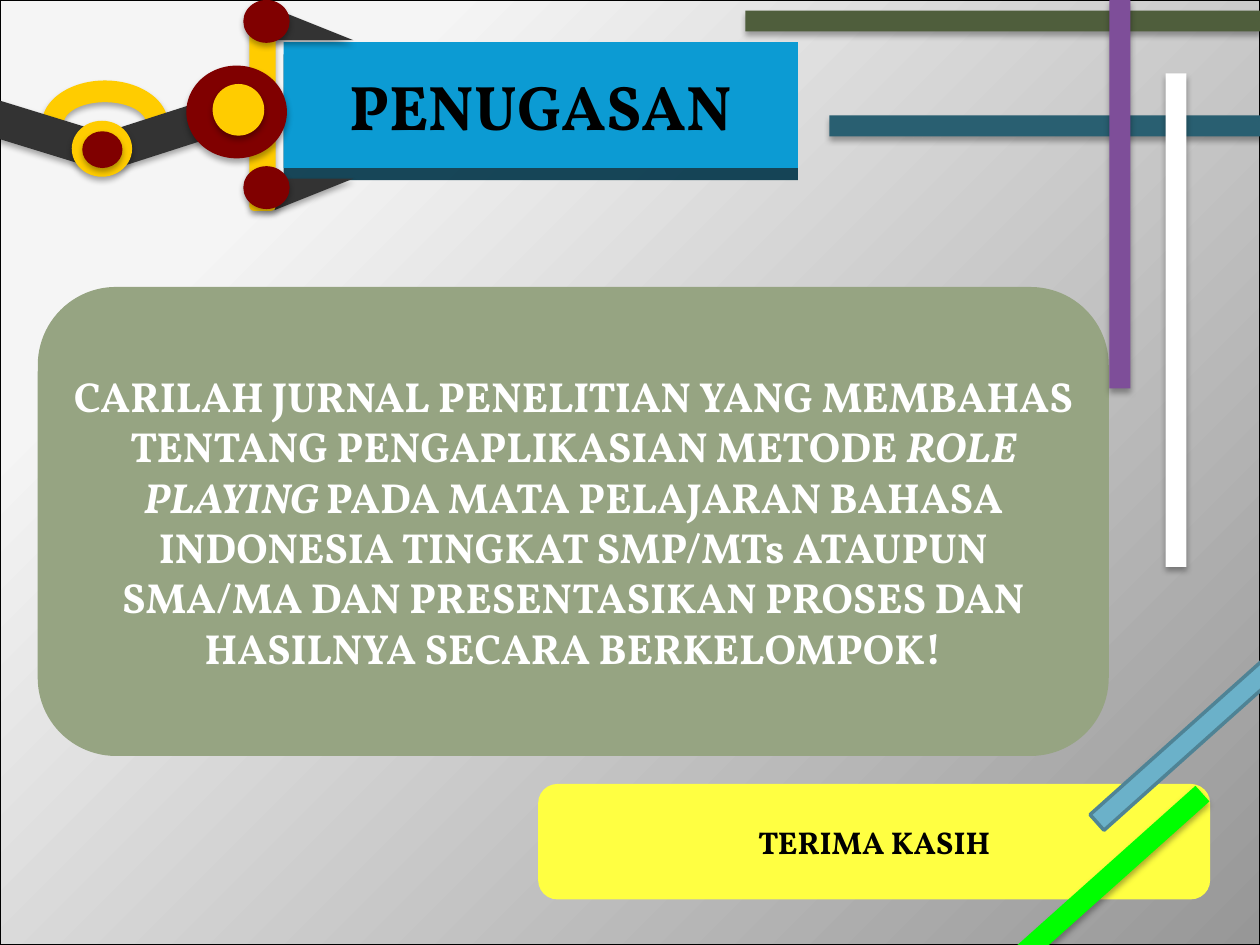
from dataclasses import dataclass

from lxml import etree
from pptx import Presentation
from pptx.dml.color import RGBColor
from pptx.enum.shapes import MSO_SHAPE
from pptx.enum.text import MSO_ANCHOR, MSO_AUTO_SIZE, PP_ALIGN
from pptx.oxml import parse_xml
from pptx.oxml.ns import nsdecls, qn
from pptx.util import Pt

RECTANGLE, ROUNDED = MSO_SHAPE.RECTANGLE, MSO_SHAPE.ROUNDED_RECTANGLE
OVAL, ARC, TRIANGLE = MSO_SHAPE.OVAL, MSO_SHAPE.BLOCK_ARC, MSO_SHAPE.RIGHT_TRIANGLE
CENTER, MIDDLE = PP_ALIGN.CENTER, MSO_ANCHOR.MIDDLE


@dataclass(frozen=True)
class Theme:
    font: str = "Vollkorn"
    title_size: int = 36
    body_size: int = 24
    closing_size: int = 18
    black: str = "000000"
    white: str = "FFFFFF"
    light: str = "F5F5F5"
    gray: str = "979797"
    title_fill: str = "0C9BD3"
    title_edge: str = "003448"
    body_fill: str = "96A482"
    closing_fill: str = "FFFF42"
    olive: str = "4F5E3C"
    teal: str = "295F71"
    purple: str = "7E4E99"
    blue: str = "6BB1C9"
    blue_line: str = "4F8395"
    green: str = "00FF00"
    charcoal: str = "333333"
    gold: str = "FFCC00"
    maroon: str = "800000"


THEME = Theme()


def add_shadow(shape, color=THEME.black, opacity=32, blur=3.5, distance=2.2):
    effects = shape._element.spPr.find(qn("a:effectLst"))
    effects.append(parse_xml(
        f'<a:outerShdw {nsdecls("a")} blurRad="{Pt(blur)}" dist="{Pt(distance)}" '
        f'dir="5400000" algn="ctr" rotWithShape="0"><a:srgbClr val="{color}">'
        f'<a:alpha val="{opacity * 1000}"/></a:srgbClr></a:outerShdw>'))


def paint(shape, color, line=None, line_width=1):
    shape.shadow.inherit = False
    shape.fill.solid()
    shape.fill.fore_color.rgb = RGBColor.from_string(color)
    if line:
        shape.line.color.rgb = RGBColor.from_string(line)
        shape.line.width = Pt(line_width)
    else:
        shape.line.fill.background()


def add_part(shapes, kind, box, color, rotation=0, shadow=True, **line):
    shape = shapes.add_shape(kind, *map(Pt, box))
    paint(shape, color, **line)
    shape.rotation = rotation
    if shadow:
        add_shadow(shape)
    return shape


def write_text(shape, runs, size, color, side_margin=7.2):
    """Write (text, italic) runs as one centred bold paragraph."""
    frame = shape.text_frame
    settings = {"word_wrap": True, "auto_size": MSO_AUTO_SIZE.NONE,
                "vertical_anchor": MIDDLE,
                "margin_left": Pt(side_margin), "margin_right": Pt(side_margin)}
    for name, value in settings.items():
        setattr(frame, name, value)
    paragraph = frame.paragraphs[0]
    paragraph.alignment = CENTER
    for text, italic in runs:
        run = paragraph.add_run()
        run.text = text
        font_format = {"name": THEME.font, "size": Pt(size), "bold": True, "italic": italic}
        for name, value in font_format.items():
            setattr(run.font, name, value)
        run.font.color.rgb = RGBColor.from_string(color)


def add_backdrop(slide, box):
    shape = add_part(slide.shapes, RECTANGLE, box, THEME.light, shadow=False,
                     line=THEME.black, line_width=0.75)
    shape.fill.gradient()
    for stop, color, position in zip(shape.fill.gradient_stops,
                                     (THEME.light, THEME.gray), (0.2, 1)):
        stop.color.rgb = RGBColor.from_string(color)
        stop.position = position
    gradient = shape._element.spPr.find(qn("a:gradFill"))
    gradient.remove(gradient.find(qn("a:lin")))
    radial = etree.SubElement(gradient, qn("a:path"), {"path": "circle"})
    etree.SubElement(radial, qn("a:fillToRect"),
                     {"l": "-15000", "t": "-15000", "r": "115000", "b": "115000"})


def add_title(slide, box):
    """Turn the title placeholder into a rounded panel with a dark lower edge."""
    title = slide.shapes.title
    title.left, title.top, title.width, title.height = map(Pt, box)
    outline = parse_xml(f'<a:prstGeom {nsdecls("a")} prst="roundRect"><a:avLst/></a:prstGeom>')
    title._element.spPr.find(qn("a:xfrm")).addnext(outline)
    paint(title, THEME.title_fill)
    add_shadow(title, THEME.title_edge, opacity=90, blur=0, distance=7)
    write_text(title, [("PENUGASAN", False)], THEME.title_size, THEME.black)
    slide.shapes._spTree.append(title._element)


def add_assignment(slide, box):
    panel = add_part(slide.shapes, ROUNDED, box, THEME.body_fill, shadow=False)
    runs = [
        ("CARILAH JURNAL PENELITIAN YANG MEMBAHAS TENTANG PENGAPLIKASIAN METODE ", False),
        ("ROLE PLAYING ", True),
        ("PADA MATA PELAJARAN BAHASA INDONESIA TINGKAT SMP/MTs ATAUPUN SMA/MA DAN "
         "PRESENTASIKAN PROSES DAN HASILNYA SECARA BERKELOMPOK!", False)]
    write_text(panel, runs, THEME.body_size, THEME.white, side_margin=5)


def add_closing(slide, box):
    panel = add_part(slide.shapes, ROUNDED, box, THEME.closing_fill, shadow=False)
    write_text(panel, [("TERIMA KASIH", False)], THEME.closing_size, THEME.black)


def add_bars(slide, box):
    left, top, _, _ = box
    thickness = 12
    bars = [(426, 6, 294, thickness, THEME.olive), (474, 66, 294, thickness, THEME.teal),
            (634, 0, thickness, 222, THEME.purple), (666, 42, thickness, 282, THEME.white)]
    for x, y, width, height, color in bars:
        add_part(slide.shapes, RECTANGLE, (left + x, top + y, width, height), color)
    add_part(slide.shapes, RECTANGLE, (left + 605.5, top + 408, 168, thickness), THEME.blue,
             138.2, shadow=False, line=THEME.blue_line, line_width=2)
    add_part(slide.shapes, RECTANGLE, (left + 540.5, top + 503.5, 168, thickness),
             THEME.green, 138.2)


def add_robot_arm(slide, box):
    left, top, _, _ = box
    shapes = slide.shapes.add_group_shape().shapes
    for y, rotation, flips in ((-8.5, 90, ("flipH",)), (88.5, 270, ("flipH", "flipV"))):
        claw = add_part(shapes, TRIANGLE, (left + 170.5, top + y, 18, 45),
                        THEME.charcoal, rotation)
        for flip in flips:
            claw._element.spPr.find(qn("a:xfrm")).set(flip, "1")
    parts = [
        (ROUNDED, (142.5, 3.5, 15, 117), THEME.gold, 0),
        (OVAL, (139, 0, 26.5, 24.5), THEME.maroon, 0),
        (OVAL, (139, 95, 26.5, 24.5), THEME.maroon, 0),
        (ARC, (24, 46, 72, 49.5), THEME.gold, 0),
        (ROUNDED, (57, 65.5, 72.5, 21.5), THEME.charcoal, 342.2),
        (OVAL, (106.5, 37.5, 57.5, 53), THEME.maroon, 0),
        (OVAL, (121.5, 48, 29.5, 29.5), THEME.gold, 0),
        (ROUNDED, (-12, 65.5, 72.5, 21), THEME.charcoal, 17.1),
        (OVAL, (41, 69, 34.5, 32), THEME.gold, 0),
        (OVAL, (47, 75, 23, 21), THEME.maroon, 0)]
    for kind, (x, y, width, height), color, rotation in parts:
        add_part(shapes, kind, (left + x, top + y, width, height), color, rotation)


def main():
    presentation = Presentation()
    presentation.slide_width, presentation.slide_height = Pt(720), Pt(540)
    slide = presentation.slides.add_slide(presentation.slide_layouts[5])
    page = (0, 0, 720, 540)
    add_backdrop(slide, page)
    add_title(slide, (162, 24, 294, 72))
    add_assignment(slide, (21.6, 164, 612, 268))
    add_closing(slide, (307.5, 448, 384, 66))
    add_bars(slide, page)
    add_robot_arm(slide, (0, 0, 202, 121))
    presentation.save("out.pptx")


if __name__ == "__main__":
    main()
